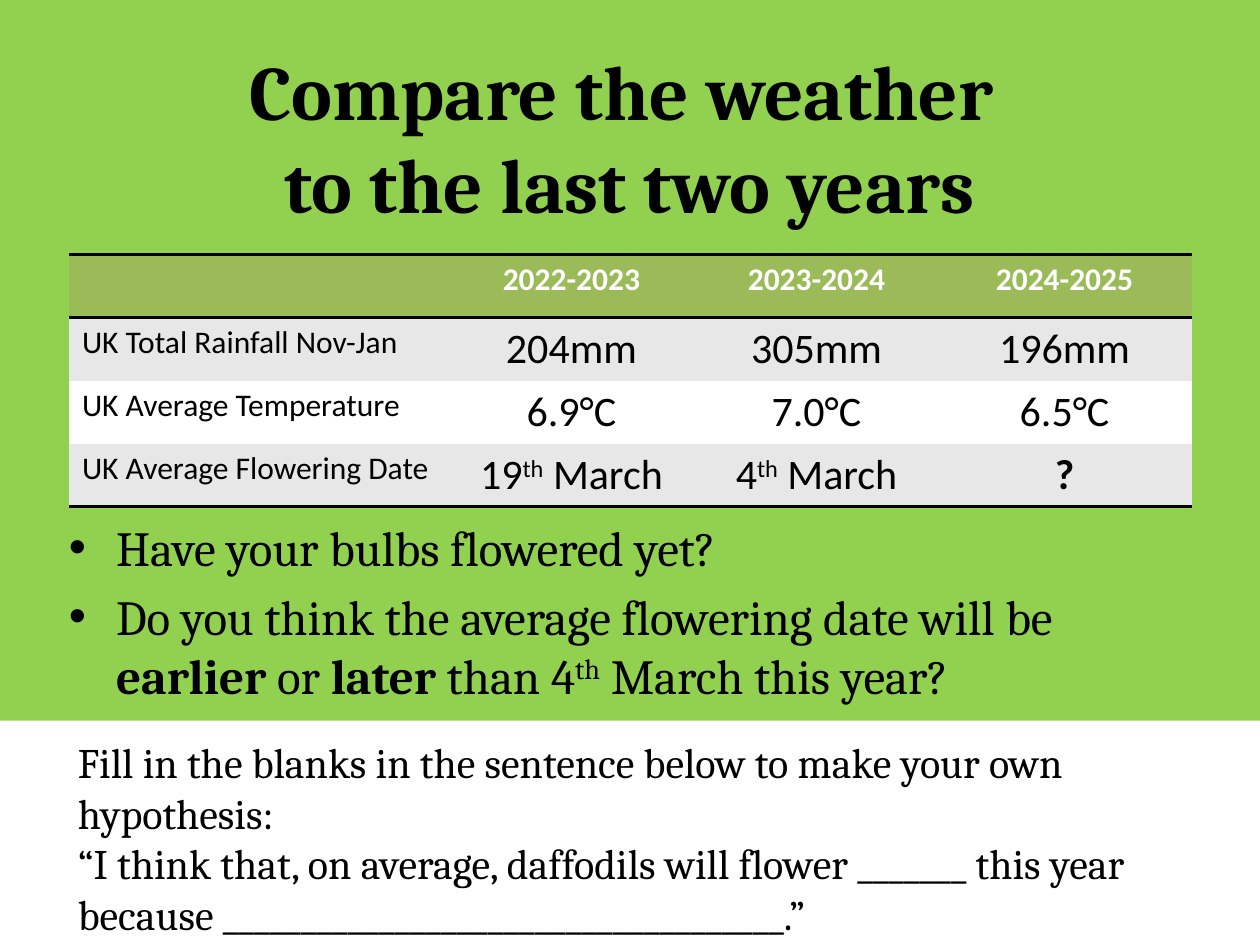
import lxml.etree
import pptx
import pptx.dml.color
import pptx.enum.shapes
import pptx.enum.text
import pptx.oxml.ns
import pptx.util

Cm = pptx.util.Cm
Pt = pptx.util.Pt
RGB = pptx.dml.color.RGBColor
ALIGN = pptx.enum.text.PP_ALIGN
qn = pptx.oxml.ns.qn

GREEN = RGB(0x92, 0xD0, 0x50)
OLIVE = RGB(0x9B, 0xBB, 0x59)
GREY = RGB(0xE7, 0xE7, 0xE7)
WHITE = RGB(0xFF, 0xFF, 0xFF)
BLACK = RGB(0, 0, 0)

PLAIN_GRID = "{2D5ABB26-0587-4C30-8999-92F81FD0307C}"
BOLD, SUPER = "bold", "super"

WIDTHS = (7.62, 5, 4.88, 5.12)
ROWS = (
    ("", "2022-2023", "2023-2024", "2024-2025"),
    ("UK Total Rainfall Nov-Jan", "204mm", "305mm", "196mm"),
    ("UK Average Temperature", "6.9°C", "7.0°C", "6.5°C"),
    ("UK Average Flowering Date",
     ["19", ("th", SUPER), " March"],
     ["4", ("th", SUPER), " March"],
     [("?", BOLD)]),
)
ASKS = (
    "Have your bulbs flowered yet?",
    ["Do you think the average flowering date will be ", ("earlier", BOLD),
     " or ", ("later", BOLD), " than 4", ("th", SUPER),
     " March this year?"],
)
TASK = (
    "Fill in the blanks in the sentence below to make your own hypothesis:",
    "“I think that, on average, daffodils will flower _______ this year "
    "because ____________________________________.”",
)


def add_bullet(para):
    props = para._p.get_or_add_pPr()
    props.set("marL", str(Cm(0.95)))
    props.set("indent", str(-Cm(0.95)))
    font = lxml.etree.SubElement(props, qn("a:buFont"))
    font.set("typeface", "Arial")
    lxml.etree.SubElement(props, qn("a:buChar")).set("char", "•")


def write(frame, paras, size, face="Cambria", color=BLACK, bold=False,
          align=ALIGN.LEFT, bullet=False, gap=0):
    """Fill a frame; a paragraph is a string or a list of runs,
    and a run is a string or a (string, style) pair."""
    frame.word_wrap = True
    for i, parts in enumerate(paras):
        para = frame.add_paragraph() if i else frame.paragraphs[0]
        para.alignment = align
        if i and gap:
            para.space_before = Pt(gap)
        if bullet:
            add_bullet(para)
        para.font.size = Pt(size)
        for part in [parts] if isinstance(parts, str) else parts:
            words, style = (part, None) if isinstance(part, str) else part
            for j, line in enumerate(words.split("\n")):
                if j:
                    para.add_line_break()
                run = para.add_run()
                run.text = line
                run.font.name = face
                run.font.size = Pt(size)
                run.font.color.rgb = color
                run.font.bold = bold or style == BOLD
                if style == SUPER:
                    run.font._rPr.set("baseline", "30000")


def add_text(slide, left, top, width, height, paras, **form):
    box = slide.shapes.add_textbox(Cm(left), Cm(top), Cm(width), Cm(height))
    write(box.text_frame, paras, **form)


def add_panel(slide, left, top, width, height):
    panel = slide.shapes.add_shape(
        pptx.enum.shapes.MSO_SHAPE.RECTANGLE,
        Cm(left), Cm(top), Cm(width), Cm(height))
    panel.shadow.inherit = False
    panel.fill.solid()
    panel.fill.fore_color.rgb = WHITE
    panel.line.fill.background()


def add_edge(cell, side):
    line = lxml.etree.SubElement(
        cell._tc.get_or_add_tcPr(), qn("a:ln" + side), w=str(Pt(2)))
    fill = lxml.etree.SubElement(line, qn("a:solidFill"))
    lxml.etree.SubElement(fill, qn("a:srgbClr")).set("val", str(BLACK))


def add_grid(slide, left, top, row_height):
    count = len(ROWS)
    grid = slide.shapes.add_table(
        count, len(WIDTHS), Cm(left), Cm(top),
        Cm(sum(WIDTHS)), Cm(row_height * count)).table
    grid._tbl.tblPr.find(qn("a:tableStyleId")).text = PLAIN_GRID
    for col, width in zip(grid.columns, WIDTHS):
        col.width = Cm(width)
    for r, row in enumerate(ROWS):
        edges = {0: "TB", count - 1: "B"}.get(r, "")
        back = OLIVE if r == 0 else GREY if r % 2 else WHITE
        for c, words in enumerate(row):
            cell = grid.cell(r, c)
            for side in edges:
                add_edge(cell, side)
            cell.fill.solid()
            cell.fill.fore_color.rgb = back
            write(cell.text_frame, [words], face="Calibri",
                  size=24 if r and c else 18,
                  color=BLACK if r else WHITE, bold=r == 0,
                  align=ALIGN.CENTER if c else ALIGN.LEFT)


def main():
    deck = pptx.Presentation()
    deck.slide_width, deck.slide_height = Cm(25.4), Cm(19.05)
    slide = deck.slides.add_slide(deck.slide_layouts[6])
    slide.background.fill.solid()
    slide.background.fill.fore_color.rgb = GREEN

    add_panel(slide, 0, 14.53, 25.4, 4.6)
    add_text(slide, 1.27, 0.76, 22.86, 3.18,
             ["Compare the weather \nto the last two years"],
             size=44, bold=True, align=ALIGN.CENTER)
    add_text(slide, 1.14, 10.31, 22.86, 4.8, ASKS,
             size=28, bullet=True, gap=5.6)
    add_text(slide, 1.32, 14.73, 22.58, 4.37, TASK, size=24)
    add_grid(slide, 1.4, 5.13, 1.27)
    deck.save("out.pptx")


if __name__ == "__main__":
    main()
